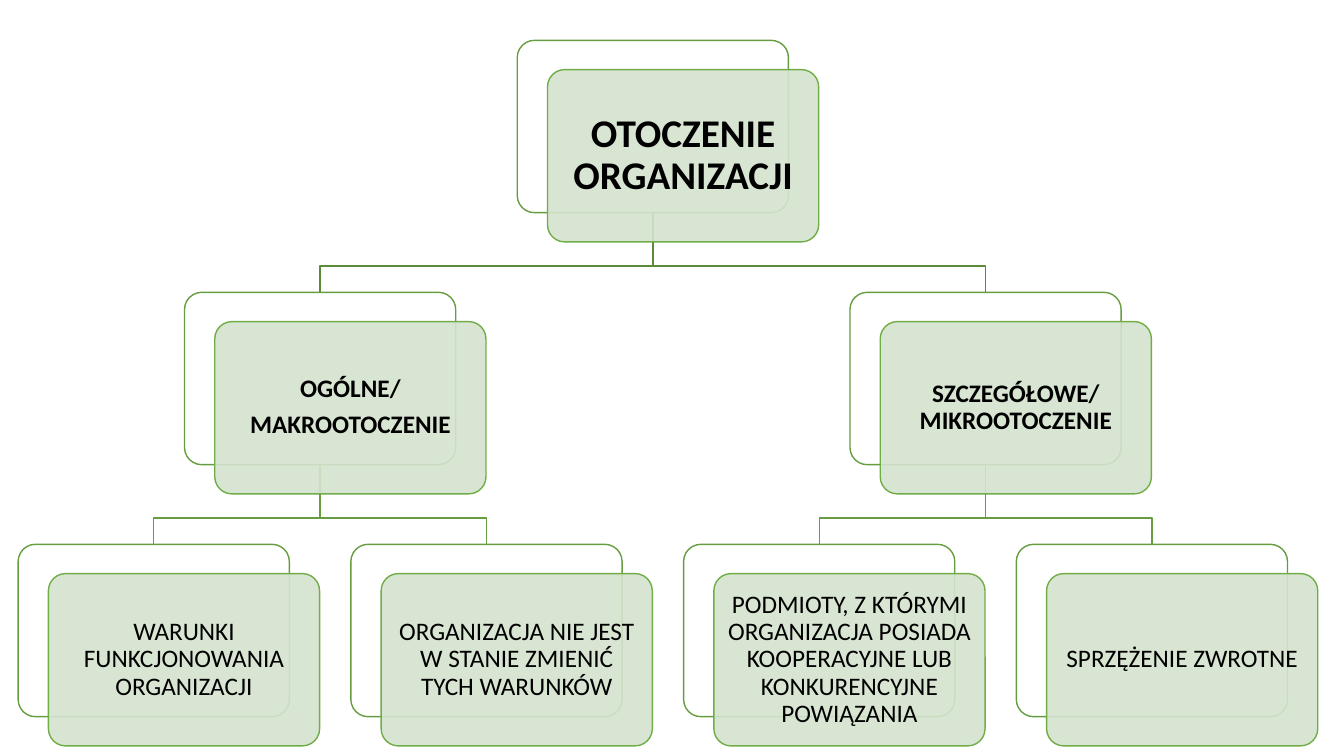
from dataclasses import dataclass

from lxml import etree
from pptx import Presentation
from pptx.dml.color import RGBColor
from pptx.enum.shapes import MSO_SHAPE
from pptx.enum.text import MSO_ANCHOR, PP_ALIGN
from pptx.oxml.ns import qn
from pptx.util import Inches, Pt

ROUNDED = MSO_SHAPE.ROUNDED_RECTANGLE
MIDDLE = MSO_ANCHOR.MIDDLE
CENTER = PP_ALIGN.CENTER


@dataclass(frozen=True)
class Theme:
    font: str = "Calibri"
    text: str = "000000"
    back_fill: str = "FFFFFF"
    back_line: str = "669D40"
    front_fill: str = "D5E3CF"
    front_line: str = "70AD47"
    front_opacity: int = 90
    branch_lines: tuple = ("5A8B39", "669D40")
    sizes: tuple = (28, 18, 18)
    insets: tuple = (0.12, 0.07, 0.07)
    bold_levels: tuple = (0, 1)
    line_width: float = 1


@dataclass(frozen=True)
class Node:
    paragraphs: tuple
    children: tuple = ()


THEME = Theme()
CARD_W, CARD_H = 2.69, 1.71
FRONT_DX, FRONT_DY = 0.3, 0.29
COLUMN_STEP, LEVEL_STEP = 3.3, 2.5
BRANCH_DROP = 0.53

ENVIRONMENT = Node(("OTOCZENIE ORGANIZACJI",), (
    Node(("OGÓLNE/", "MAKROOTOCZENIE"), (
        Node(("WARUNKI FUNKCJONOWANIA ORGANIZACJI",)),
        Node(("ORGANIZACJA NIE JEST W STANIE ZMIENIĆ TYCH WARUNKÓW",)),
    )),
    Node(("SZCZEGÓŁOWE/ MIKROOTOCZENIE",), (
        Node(("PODMIOTY, Z KTÓRYMI ORGANIZACJA POSIADA KOOPERACYJNE "
              "LUB KONKURENCYJNE POWIĄZANIA",)),
        Node(("SPRZĘŻENIE ZWROTNE",)),
    )),
))


def set_line(shape, color):
    shape.shadow.inherit = False
    shape.line.color.rgb = RGBColor.from_string(color)
    shape.line.width = Pt(THEME.line_width)


def leaf_count(node):
    return sum(map(leaf_count, node.children)) or 1


def place_tree(node, left, top, level=0):
    """Return (node, left, top, level, child lefts) rows, parents centred over leaves."""
    rows, child_lefts, column_left = [], [], left
    for child in node.children:
        branch = place_tree(child, column_left, top + LEVEL_STEP, level + 1)
        child_lefts.append(branch[0][1])
        rows += branch
        column_left += leaf_count(child) * COLUMN_STEP
    card_left = sum(child_lefts) / len(child_lefts) if child_lefts else left
    return [(node, card_left, top, level, child_lefts)] + rows


def add_branch(slide, left, top, level, child_left):
    """Draw the bent line from a card's lower edge to a child's upper edge."""
    start_x, end_x = Inches(left + CARD_W / 2), Inches(child_left + CARD_W / 2)
    bend_y = Inches(top + CARD_H + BRANCH_DROP)
    builder = slide.shapes.build_freeform(start_x, Inches(top + CARD_H))
    builder.add_line_segments(
        [(start_x, bend_y), (end_x, bend_y), (end_x, Inches(top + LEVEL_STEP))],
        close=False)
    branch = builder.convert_to_shape()
    branch.fill.background()
    set_line(branch, THEME.branch_lines[level])


def add_panel(slide, left, top, fill, line):
    panel = slide.shapes.add_shape(
        ROUNDED, Inches(left), Inches(top), Inches(CARD_W), Inches(CARD_H))
    panel.adjustments[0] = 0.1
    panel.fill.solid()
    panel.fill.fore_color.rgb = RGBColor.from_string(fill)
    set_line(panel, line)
    return panel


def add_label(panel, paragraphs, level):
    frame = panel.text_frame
    frame.word_wrap = True
    frame.vertical_anchor = MIDDLE
    inset = Inches(THEME.insets[level])
    frame.margin_left = frame.margin_right = inset
    frame.margin_top = frame.margin_bottom = inset
    size = THEME.sizes[level]
    for index, text in enumerate(paragraphs):
        paragraph = frame.add_paragraph() if index else frame.paragraphs[0]
        paragraph.alignment = CENTER
        paragraph.line_spacing = 0.9
        if index < len(paragraphs) - 1:
            paragraph.space_after = Pt(size * 0.35)
        run = paragraph.add_run()
        run.text = text
        run.font.name = THEME.font
        run.font.size = Pt(size)
        run.font.bold = level in THEME.bold_levels
        run.font.color.rgb = RGBColor.from_string(THEME.text)


def add_card(slide, node, left, top, level):
    """Draw a white back panel with a translucent labelled panel over it."""
    add_panel(slide, left, top, THEME.back_fill, THEME.back_line)
    front = add_panel(slide, left + FRONT_DX, top + FRONT_DY,
                      THEME.front_fill, THEME.front_line)
    fill_color = front.fill._xPr.find(qn("a:solidFill"))[0]
    etree.SubElement(fill_color, qn("a:alpha"), val=str(THEME.front_opacity * 1000))
    add_label(front, node.paragraphs, level)


def add_hierarchy(slide, root, left, top):
    rows = place_tree(root, left, top)
    for _, card_left, card_top, level, child_lefts in rows:
        for child_left in child_lefts:
            add_branch(slide, card_left, card_top, level, child_left)
    for node, card_left, card_top, level, _ in rows:
        add_card(slide, node, card_left, card_top, level)


def main():
    deck = Presentation()
    deck.slide_width, deck.slide_height = Inches(13.33), Inches(7.5)
    slide = deck.slides.add_slide(deck.slide_layouts[6])
    add_hierarchy(slide, ENVIRONMENT, 0.18, 0.4)
    deck.save("out.pptx")


if __name__ == "__main__":
    main()
